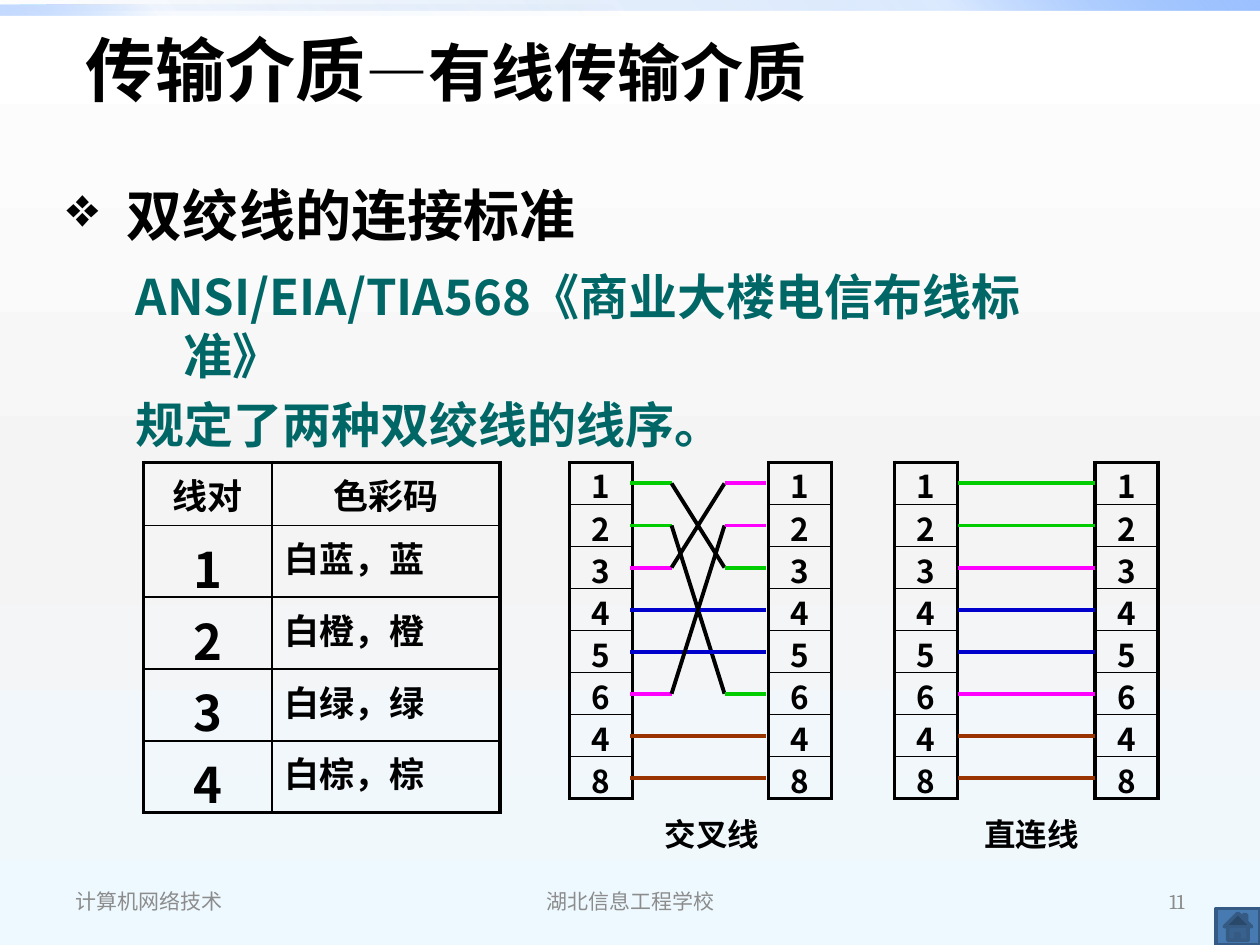
from lxml.etree import SubElement as Sub
from pptx import Presentation
from pptx.dml.color import RGBColor
from pptx.enum.shapes import MSO_CONNECTOR as CONN, MSO_SHAPE as SHAPE
from pptx.enum.text import MSO_ANCHOR as ANCHOR, PP_ALIGN as ALIGN
from pptx.oxml.ns import qn
from pptx.util import Inches, Pt

BLACK = RGBColor(0x00, 0x00, 0x00)
GRAY = RGBColor(0x8C, 0x8C, 0x8C)
TEAL = RGBColor(0x00, 0x66, 0x66)
GREEN = RGBColor(0x00, 0xCC, 0x00)
PINK = RGBColor(0xFF, 0x00, 0xFF)
BLUE = RGBColor(0x00, 0x00, 0xCC)
BROWN = RGBColor(0x99, 0x33, 0x00)
STEEL = RGBColor(0x47, 0x7A, 0xB1)
NAVY = RGBColor(0x35, 0x5A, 0x83)
SANS, SERIF = "Noto Sans CJK SC", "Times New Roman"

TITLE = [("传输介质", 40), ("—有线传输介质", 36)]
HEAD = "双绞线的连接标准"
BODY = ["ANSI/EIA/TIA568《商业大楼电信布线标准》", "规定了两种双绞线的线序。"]
PAIRS = [("线对", "色彩码"), ("1", "白蓝，蓝"), ("2", "白橙，橙"),
         ("3", "白绿，绿"), ("4", "白棕，棕")]
PINS = ["1", "2", "3", "4", "5", "6", "4", "8"]
COLORS = [GREEN, GREEN, PINK, BLUE, BLUE, PINK, BROWN, BROWN]
# Each cable: name, label left and width, left and right pin columns,
# wire start and end, and the right-hand row each left-hand row runs to
CABLES = [
    ("交叉线", 4.94, 1.42, 4.52, 6.1, 5, 6.08, [2, 5, 0, 3, 4, 1, 6, 7]),
    ("直连线", 7.52, 1.33, 7.1, 8.69, 7.6, 8.69, range(8)),
]
FOOTER = [("计算机网络技术", 0.5, 2.33, ALIGN.LEFT),
          ("湖北信息工程学校", 3.42, 3.17, ALIGN.CENTER),
          ("11", 7.17, 2.33, ALIGN.RIGHT)]
BG = [(0, "FFFFFF", 100), (55, "F4F4F4", 100), (100, "EEF9FF", 100)]
BARS = [
    (0, 0, 10, 315, [(0, "0058B7", 0), (75, "4F95FF", 20), (100, "9EC2FF", 100)]),
    (0, 0.04, 5, 135, [(0, "0058B7", 0), (75, "4F95FF", 5), (100, "9EC2FF", 60)]),
]
TOP, PITCH = 3.67, 2.67 / 8


def grad(fill, root, stops, angle):
    """Give fill, which lies inside root, stops of (percent, colour, opacity)."""
    fill.gradient()
    fill.gradient_angle = 360 - angle
    items = root.find(".//" + qn("a:gsLst"))
    for old in list(items):
        items.remove(old)
    for pos, color, alpha in stops:
        stop = Sub(items, qn("a:gs"), pos=str(pos * 1000))
        rgb = Sub(stop, qn("a:srgbClr"), val=color)
        Sub(rgb, qn("a:alpha"), val=str(alpha * 1000))


def add_run(para, text, size, font=SANS, color=BLACK, bold=True):
    run = para.add_run()
    run.text = text
    run.font.size, run.font.name, run.font.bold = Pt(size), font, bold
    run.font.color.rgb = color
    east = Sub(run._r.get_or_add_rPr(), qn("a:ea"))
    east.set("typeface", SANS)


def add_box(slide, left, top, width, height):
    frame = slide.shapes.add_textbox(
        Inches(left), Inches(top), Inches(width), Inches(height)).text_frame
    frame.word_wrap = True
    return frame


def hang(para, inches, bullet=None):
    props = para._p.get_or_add_pPr()
    props.set("marL", str(Inches(inches)))
    props.set("indent", str(-Inches(inches)))
    if bullet:
        Sub(props, qn("a:buChar"), char=bullet)


def add_border(cell, sides):
    props = cell._tc.get_or_add_tcPr()
    for k, (side, width) in enumerate(sides):
        line = Sub(props, qn("a:ln" + side), w=str(Pt(width)))
        Sub(Sub(line, qn("a:solidFill")), qn("a:srgbClr"), val=str(BLACK))
        props.insert(k, line)


def add_grid(slide, left, widths, heights, pad):
    """Add an unfilled table with a thick frame and thin inner lines."""
    rows, cols = len(heights), len(widths)
    table = slide.shapes.add_table(
        rows, cols, Inches(left), Inches(TOP),
        Inches(sum(widths)), Inches(sum(heights))).table
    table.first_row = table.horz_banding = False
    for c, width in enumerate(widths):
        table.columns[c].width = Inches(width)
    for r, height in enumerate(heights):
        table.rows[r].height = Inches(height)
        for c in range(cols):
            cell = table.cell(r, c)
            cell.margin_left = cell.margin_right = Inches(pad[0])
            cell.margin_top = cell.margin_bottom = Inches(pad[1])
            cell.fill.background()
            edges = [("L", c == 0), ("R", c == cols - 1),
                     ("T", r == 0), ("B", r == rows - 1)]
            add_border(cell, [(s, 2.25 if out else 1) for s, out in edges])
    return table


def add_pins(slide, left, pad):
    table = add_grid(slide, left, [0.5], [PITCH] * len(PINS), (pad, 0))
    for r, pin in enumerate(PINS):
        para = table.cell(r, 0).text_frame.paragraphs[0]
        para.alignment = ALIGN.CENTER
        add_run(para, pin, 18)


def add_line(slide, x1, y1, x2, y2, color):
    line = slide.shapes.add_connector(
        CONN.STRAIGHT, Inches(x1), Inches(y1), Inches(x2), Inches(y2))
    line.line.color.rgb, line.line.width = color, Pt(2.25)
    Sub(line._element.spPr, qn("a:effectLst"))


def add_wire(slide, start, end, row, dest, color):
    y1, y2 = (TOP + PITCH * (k + 0.5) for k in (row, dest))
    if row == dest:
        add_line(slide, start, y1, end, y1, color)
        return
    bend = 0.33
    add_line(slide, start, y1, start + bend, y1, color)
    add_line(slide, start + bend, y1, end - bend, y2, BLACK)
    add_line(slide, end - bend, y2, end, y2, color)


def main():
    prs = Presentation()
    prs.slide_width, prs.slide_height = Inches(10), Inches(7.5)
    slide = prs.slides.add_slide(prs.slide_layouts[5])
    grad(slide.background.fill, slide._element, BG, 90)
    for left, top, width, angle, stops in BARS:
        bar = slide.shapes.add_shape(
            SHAPE.RECTANGLE, Inches(left), Inches(top), Inches(width), Inches(0.08))
        bar.shadow.inherit = False
        bar.line.fill.background()
        grad(bar.fill, bar._element, stops, angle)

    title = slide.shapes.title
    title.left, title.top = Inches(0.58), Inches(0.21)
    title.width, title.height = Inches(8.25), Inches(0.67)
    title.text_frame.vertical_anchor = ANCHOR.MIDDLE
    para = title.text_frame.paragraphs[0]
    para.alignment = ALIGN.LEFT
    for text, size in TITLE:
        add_run(para, text, size)

    para = add_box(slide, 0.43, 1.38, 4.6, 0.63).paragraphs[0]
    hang(para, 0.48, "❖")
    add_run(para, HEAD, 32)
    frame = add_box(slide, 0.98, 2.07, 7.99, 1.13)
    for k, text in enumerate(BODY):
        para = frame.add_paragraph() if k else frame.paragraphs[0]
        hang(para, 0.38)
        if k:
            para.space_before = Pt(5.6)
        add_run(para, text, 28, color=TEAL)

    table = add_grid(slide, 1.14, [1.02, 1.81], [0.5] + [0.57] * 4, (0.1, 0.05))
    for r, row in enumerate(PAIRS):
        for c, text in enumerate(row):
            para = table.cell(r, c).text_frame.paragraphs[0]
            para.alignment = ALIGN.LEFT if r and c else ALIGN.CENTER
            add_run(para, text, 28 if r and not c else 20, SERIF if r and c else SANS)

    for name, left, width, pin1, pin2, start, end, dests in CABLES:
        add_pins(slide, pin1, 0.1)
        add_pins(slide, pin2, 0)
        for row, dest in enumerate(dests):
            add_wire(slide, start, end, row, dest, COLORS[row])
        para = add_box(slide, left, 6.42, width, 0.4).paragraphs[0]
        para.alignment = ALIGN.CENTER
        add_run(para, name, 18, "Arial")

    for text, left, width, align in FOOTER:
        frame = add_box(slide, left, 6.95, width, 0.4)
        frame.vertical_anchor = ANCHOR.MIDDLE
        frame.paragraphs[0].alignment = align
        add_run(frame.paragraphs[0], text, 12, "Cambria", GRAY, False)

    home = slide.shapes.add_shape(
        SHAPE.ACTION_BUTTON_HOME, Inches(9.65), Inches(7.21), Inches(0.35), Inches(0.29))
    home.shadow.inherit = False
    home.fill.solid()
    home.fill.fore_color.rgb = STEEL
    home.line.color.rgb, home.line.width = NAVY, Pt(2)
    prs.save("out.pptx")


if __name__ == "__main__":
    main()
